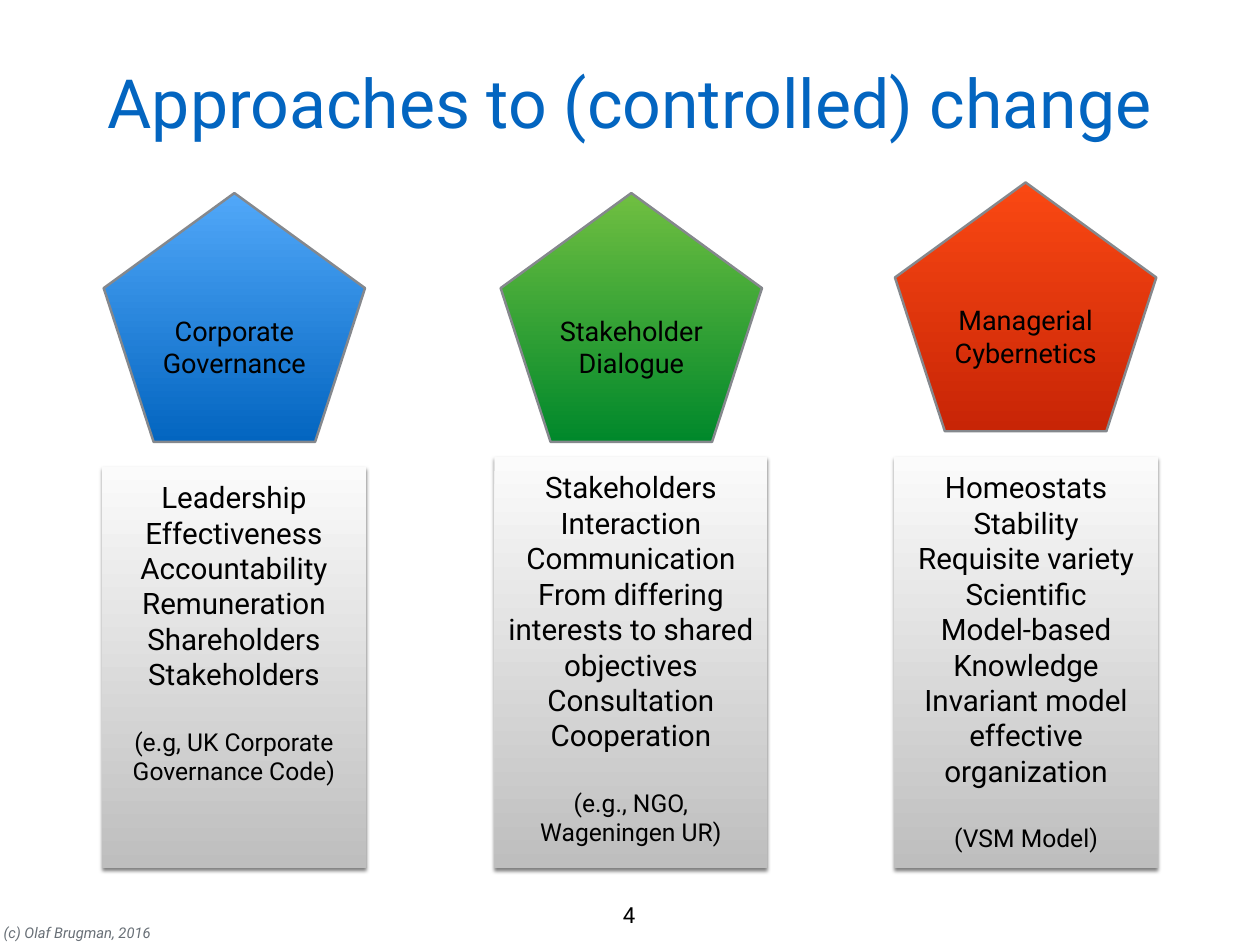
from lxml.etree import SubElement
from pptx import Presentation
from pptx.dml.color import RGBColor
from pptx.enum.shapes import MSO_SHAPE as Preset
from pptx.enum.text import MSO_ANCHOR as Anchor, PP_ALIGN as Align
from pptx.oxml.ns import qn
from pptx.util import Inches, Pt

BLACK = RGBColor(0x00, 0x00, 0x00)
TITLE_BLUE = RGBColor(0x03, 0x65, 0xC0)
OUTLINE_GRAY = RGBColor(0x85, 0x88, 0x8D)
FOOTER_GRAY = RGBColor(0x68, 0x6F, 0x76)
BOX_GRADIENT = (RGBColor(0xFB, 0xFB, 0xFB), RGBColor(0xBE, 0xBE, 0xBE))
FONT = "Roboto"

APPROACHES = [
    {
        "name": ["Corporate", "Governance"],
        "gradient": (RGBColor(0x51, 0xA8, 0xF9), TITLE_BLUE),
        "pentagon": (1.17, 2.18),
        "box": (1.15, 5.27, 2.98),
        "topics": ["Leadership", "Effectiveness", "Accountability",
                   "Remuneration", "Shareholders", "Stakeholders"],
        "example": "(e.g, UK Corporate Governance Code)",
    },
    {
        "name": ["Stakeholder", "Dialogue"],
        "gradient": (RGBColor(0x70, 0xBF, 0x41), RGBColor(0x00, 0x88, 0x2B)),
        "pentagon": (5.65, 2.18),
        "box": (5.58, 5.16, 3.08),
        "topics": ["Stakeholders", "Interaction", "Communication",
                   "From differing interests to shared objectives",
                   "Consultation", "Cooperation"],
        "example": "(e.g., NGO, Wageningen UR)",
    },
    {
        "name": ["Managerial", "Cybernetics"],
        "gradient": (RGBColor(0xFA, 0x48, 0x13), RGBColor(0xC8, 0x25, 0x06)),
        "pentagon": (10.1, 2.06),
        "box": (10.09, 5.16, 2.98),
        "topics": ["Homeostats", "Stability", "Requisite variety",
                   "Scientific", "Model-based", "Knowledge",
                   "Invariant model effective organization"],
        "example": "(VSM Model)",
    },
]
PENTAGON_SIZE = (2.95, 2.81)
BOX_BOTTOM = 9.8
EXAMPLE_GAP = Pt(28.5)

LABELS = [
    ("Approaches to (controlled) change", (1.04, 0.49, 12.14, 1.3),
     {"size": Pt(55.2), "color": TITLE_BLUE},
     {"vertical_anchor": Anchor.MIDDLE, "word_wrap": True}, 0.06, Align.CENTER),
    ("4", (6.9, 10.12, 0.4, 0.42), {"size": Pt(18)},
     {"vertical_anchor": Anchor.TOP, "word_wrap": False}, 0.06, Align.CENTER),
    ("(c) Olaf Brugman, 2016", (0, 10.39, 1.83, 0.28),
     {"size": Pt(12), "color": FOOTER_GRAY, "italic": True},
     {"vertical_anchor": Anchor.TOP, "word_wrap": False}, 0.04, Align.LEFT),
]


def format_frame(frame, inset, settings):
    for side in ("left", "top", "right", "bottom"):
        setattr(frame, f"margin_{side}", Inches(inset))
    for name, value in settings.items():
        setattr(frame, name, value)


def write_lines(frame, lines, alignment=Align.CENTER):
    for index, (text, style) in enumerate(lines):
        paragraph = frame.add_paragraph() if index else frame.paragraphs[0]
        paragraph.alignment = alignment
        run = paragraph.add_run()
        run.text = text
        settings = {"name": FONT, "color": BLACK, **style}
        run.font.color.rgb = settings.pop("color")
        for name, value in settings.items():
            setattr(run.font, name, value)
    return paragraph


def add_gradient_shape(slide, preset, position, gradient):
    shape = slide.shapes.add_shape(preset, *map(Inches, position))
    shape.shadow.inherit = False
    shape.fill.gradient()
    shape.fill.gradient_angle = 270
    for stop, color, place in zip(shape.fill.gradient_stops, gradient, (0, 1)):
        stop.color.rgb = color
        stop.position = place
    return shape


def add_drop_shadow(shape):
    effects = shape._element.spPr.find(qn("a:effectLst"))
    shadow = SubElement(effects, qn("a:outerShdw"), blurRad=str(Pt(3)),
                        dist=str(Pt(2)), dir="5400000", rotWithShape="0")
    color = SubElement(shadow, qn("a:srgbClr"), val=str(BLACK))
    SubElement(color, qn("a:alpha"), val="50000")


def add_pentagon(slide, approach):
    position = approach["pentagon"] + PENTAGON_SIZE
    shape = add_gradient_shape(slide, Preset.REGULAR_PENTAGON, position, approach["gradient"])
    shape.line.color.rgb = OUTLINE_GRAY
    shape.line.width = Pt(2)
    format_frame(shape.text_frame, 0.06,
                 {"vertical_anchor": Anchor.MIDDLE, "word_wrap": True})
    write_lines(shape.text_frame, [(text, {"size": Pt(22)}) for text in approach["name"]])


def add_topic_box(slide, approach):
    left, top, width = approach["box"]
    position = (left, top, width, BOX_BOTTOM - top)
    shape = add_gradient_shape(slide, Preset.RECTANGLE, position, BOX_GRADIENT)
    shape.line.fill.background()
    add_drop_shadow(shape)
    format_frame(shape.text_frame, 0.14,
                 {"vertical_anchor": Anchor.TOP, "word_wrap": True})
    lines = [(text, {"size": Pt(24)}) for text in approach["topics"]]
    lines.append((approach["example"], {"size": Pt(20)}))
    write_lines(shape.text_frame, lines).space_before = EXAMPLE_GAP


def main():
    presentation = Presentation()
    presentation.slide_width = Inches(14.22)
    presentation.slide_height = Inches(10.67)
    slide = presentation.slides.add_slide(presentation.slide_layouts[6])
    for approach in APPROACHES:
        add_pentagon(slide, approach)
        add_topic_box(slide, approach)
    for text, position, style, settings, inset, alignment in LABELS:
        label = slide.shapes.add_textbox(*map(Inches, position))
        format_frame(label.text_frame, inset, settings)
        write_lines(label.text_frame, [(text, style)], alignment)
    presentation.save("out.pptx")


if __name__ == "__main__":
    main()
